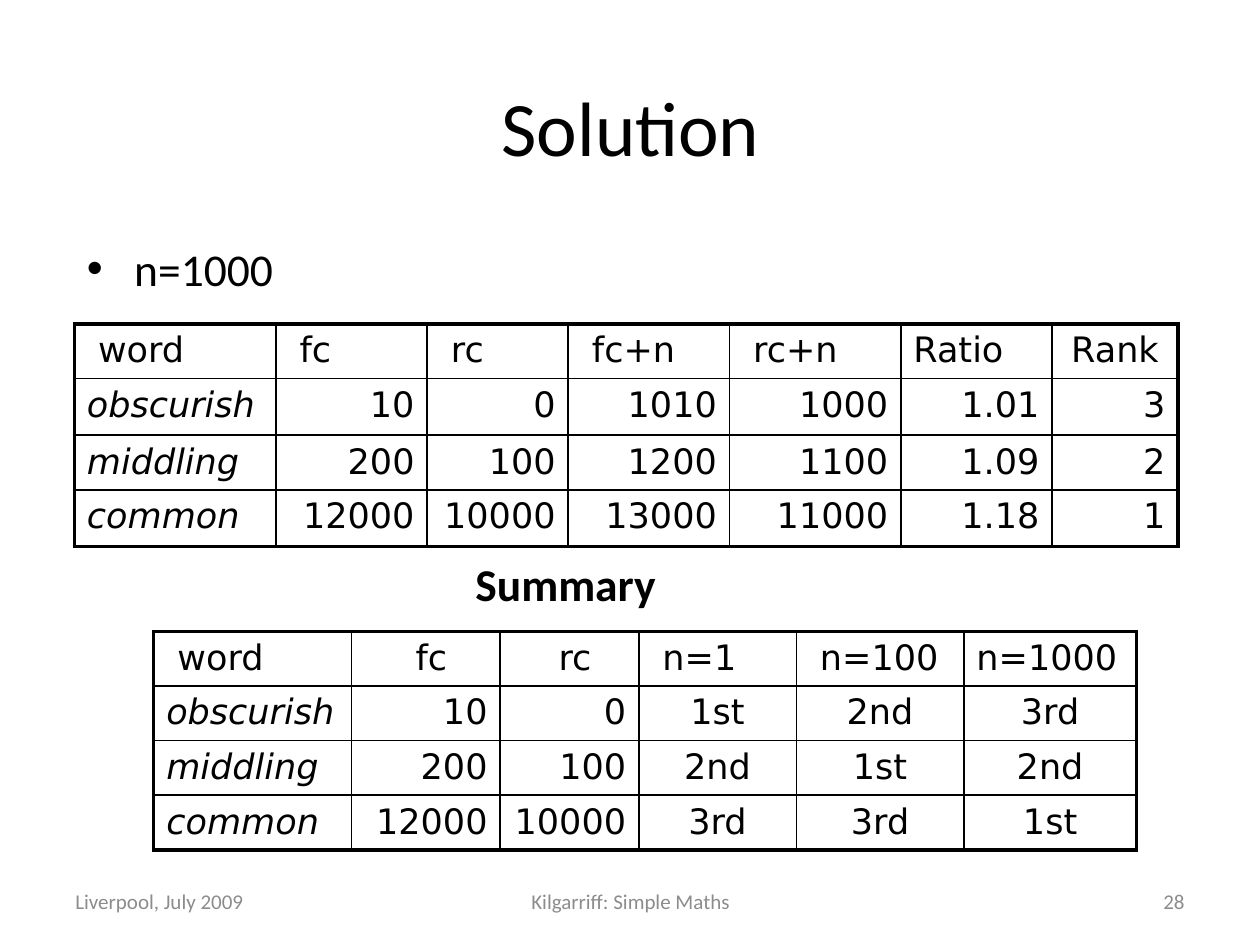
import pptx
import pptx.util
import pptx.dml.color
import pptx.enum.text
import pptx.oxml.ns
import lxml.etree

Inches = pptx.util.Inches
Pt = pptx.util.Pt
ALIGN = pptx.enum.text.PP_ALIGN
MIDDLE = pptx.enum.text.MSO_ANCHOR.MIDDLE
BLACK = pptx.dml.color.RGBColor(0, 0, 0)
GREY = pptx.dml.color.RGBColor(0x8C, 0x8C, 0x8C)
SIDES = {"l": ALIGN.LEFT, "c": ALIGN.CENTER, "r": ALIGN.RIGHT}


def style(para, size, face="Calibri", color=BLACK, align=ALIGN.LEFT):
    para.font.size = Pt(size)
    para.font.name = face
    para.font.color.rgb = color
    para.alignment = align


def border(cell, side, width):
    props = cell._tc.get_or_add_tcPr()
    line = lxml.etree.SubElement(props, pptx.oxml.ns.qn("a:ln" + side), w=str(Pt(width)))
    fill = lxml.etree.SubElement(line, pptx.oxml.ns.qn("a:solidFill"))
    lxml.etree.SubElement(fill, pptx.oxml.ns.qn("a:srgbClr"), val=str(BLACK))


deck = pptx.Presentation()
deck.slide_width, deck.slide_height = Inches(10), Inches(7.5)
slide = deck.slides.add_slide(deck.slide_layouts[1])

title = slide.shapes.title
title.left, title.top = Inches(0.63), Inches(0.33)
title.width, title.height = Inches(8.75), Inches(1.33)
title.text_frame.text = "Solution"
style(title.text_frame.paragraphs[0], 44, align=ALIGN.CENTER)

body = slide.placeholders[1]
body.left, body.top = Inches(0.59), Inches(1.86)
body.width, body.height = Inches(7.8), Inches(4.51)
body.text_frame.text = "n=1000\nSummary"
first, last = body.text_frame.paragraphs
style(first, 26)
style(last, 26, align=ALIGN.CENTER)
last.font.bold = True
last.space_before = Pt(149)
lxml.etree.SubElement(last._p.get_or_add_pPr(), pptx.oxml.ns.qn("a:buNone"))
last._p.pPr.insert_element_before(last._p.pPr[-1], "a:defRPr")

footers = [
    ("Liverpool, July 2009", 0.5, 2.33, ALIGN.LEFT),
    ("Kilgarriff: Simple Maths", 3.42, 3.17, ALIGN.CENTER),
    ("28", 7.17, 2.33, ALIGN.RIGHT),
]
for text, left, width, align in footers:
    box = slide.shapes.add_textbox(Inches(left), Inches(6.95), Inches(width), Inches(0.4))
    box.text_frame.word_wrap = True
    box.text_frame.vertical_anchor = MIDDLE
    box.text_frame.text = text
    style(box.text_frame.paragraphs[0], 12, color=GREY, align=align)

ratios = [
    [" word", " fc", " rc", " fc+n", " rc+n", "Ratio", "Rank"],
    ["obscurish", "10", "0", "1010", "1000", "1.01", "3"],
    ["middling", "200", "100", "1200", "1100", "1.09", "2"],
    ["common", "12000", "10000", "13000", "11000", "1.18", "1"],
]
ranks = [
    [" word", " fc", " rc", " n=1", " n=100", "n=1000"],
    ["obscurish", "10", "0", "1st", "2nd", "3rd"],
    ["middling", "200", "100", "2nd", "1st", "2nd"],
    ["common", "12000", "10000", "3rd", "3rd", "1st"],
]
tables = [
    (ratios, 0.59, 2.57, [1.6, 1.2, 1.12, 1.28, 1.36, 1.2, 1],
     [0.43, 0.45, 0.43, 0.45], "llllllc", "lrrrrrr"),
    (ranks, 1.22, 5.01, [1.57, 1.18, 1.1, 1.25, 1.33, 1.37],
     [0.43] * 4, "lcclll", "lrrccc"),
]
for data, left, top, widths, heights, head, rest in tables:
    table = slide.shapes.add_table(
        len(heights), len(widths), Inches(left), Inches(top),
        Inches(sum(widths)), Inches(sum(heights))).table
    table.first_row = table.horz_banding = False
    for col, width in zip(table.columns, widths):
        col.width = Inches(width)
    for r, (row, height) in enumerate(zip(data, heights)):
        table.rows[r].height = Inches(height)
        for c, text in enumerate(row):
            cell = table.cell(r, c)
            cell.text = text
            para = cell.text_frame.paragraphs[0]
            align = SIDES[(rest if r else head)[c]]
            style(para, 20, "DejaVu Sans", align=align)
            para.font.italic = r > 0 and c == 0
            edges = {"L": c == 0, "R": c == len(widths) - 1,
                     "T": r == 0, "B": r == len(heights) - 1}
            for side, outer in edges.items():
                border(cell, side, 2.25 if outer else 1)
            cell.fill.background()

deck.save("out.pptx")
